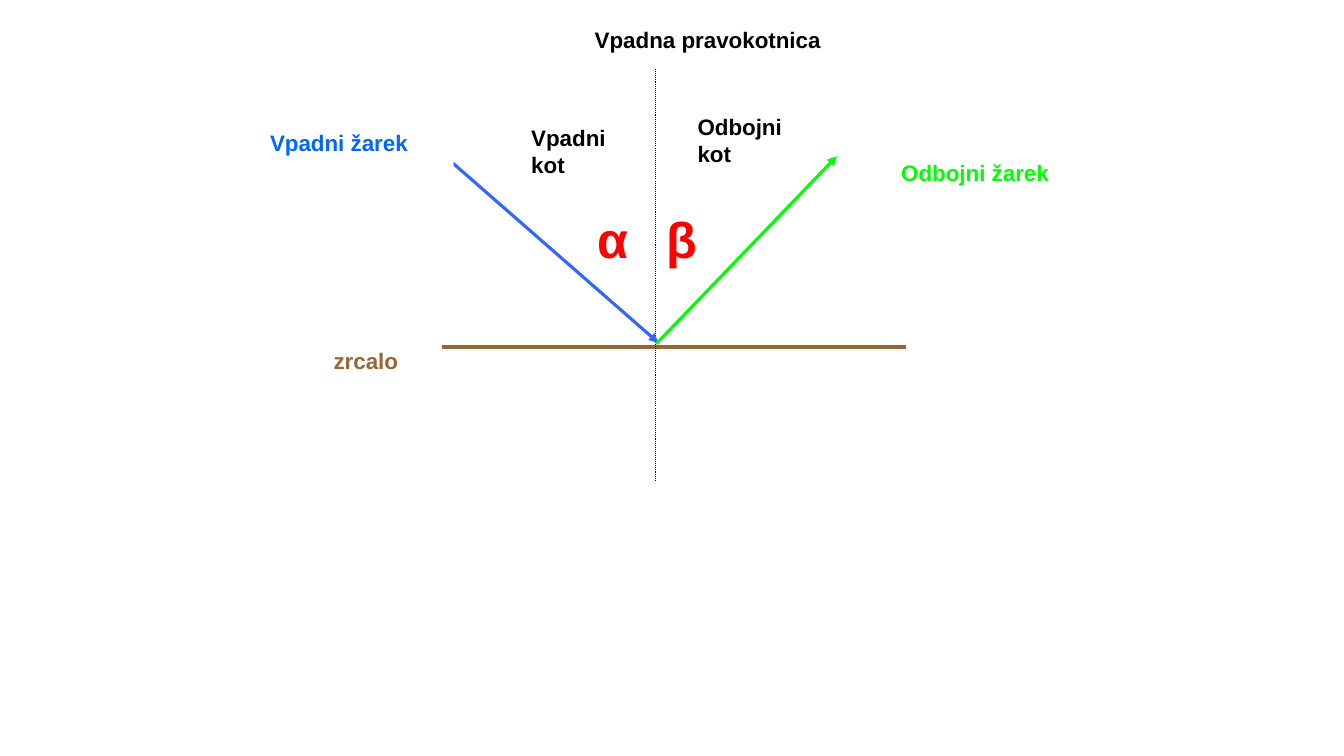
from lxml.etree import SubElement
from pptx import Presentation
from pptx.dml.color import RGBColor
from pptx.enum.dml import MSO_LINE
from pptx.enum.shapes import MSO_CONNECTOR, MSO_SHAPE
from pptx.enum.text import MSO_ANCHOR, PP_ALIGN
from pptx.oxml.ns import qn
from pptx.util import Inches, Pt

BLACK = RGBColor(0x00, 0x00, 0x00)
WHITE = RGBColor(0xFF, 0xFF, 0xFF)
RED = RGBColor(0xFF, 0x00, 0x00)
BROWN = RGBColor(0x99, 0x66, 0x33)
RAY_BLUE = RGBColor(0x33, 0x66, 0xFF)
LABEL_BLUE = RGBColor(0x00, 0x66, 0xFF)
GREEN = RGBColor(0x00, 0xFF, 0x00)


class ReflectionDiagram:
    """Draws the diagram on a grid of tenth-inch columns and rows."""

    cell = Inches(0.1)
    label_font = {"name": "Arial", "size": Pt(16), "bold": True}
    angle_font = {**label_font, "size": Pt(36)}

    def __init__(self, presentation):
        self.slide = presentation.slides.add_slide(presentation.slide_layouts[6])

    def grid(self, *cells):
        """Turns grid cells into lengths."""
        return [round(count * self.cell) for count in cells]

    def line(self, start, end, color, width, arrow=False, dash=None):
        """Adds a straight line, with an arrowhead at its end if wanted."""
        connector = self.slide.shapes.add_connector(
            MSO_CONNECTOR.STRAIGHT, *self.grid(*start, *end))
        connector.line.color.rgb = color
        connector.line.width = Pt(width)
        if dash:
            connector.line.dash_style = dash
        properties = connector.element.spPr
        if arrow:
            SubElement(properties.find(qn("a:ln")), qn("a:tailEnd"), type="triangle")
        SubElement(properties, qn("a:effectLst"))

    def set_text(self, shape, text, color, font, align=PP_ALIGN.LEFT):
        """Puts one formatted paragraph into a shape."""
        frame = shape.text_frame
        frame.word_wrap = True
        frame.vertical_anchor = MSO_ANCHOR.TOP
        paragraph = frame.paragraphs[0]
        paragraph.text = text
        paragraph.alignment = align
        for name, value in font.items():
            setattr(paragraph.font, name, value)
        paragraph.font.color.rgb = color

    def label(self, text, left, top, width, color=BLACK, height=4.7):
        """Adds a white box with a label."""
        shape = self.slide.shapes.add_shape(
            MSO_SHAPE.RECTANGLE, *self.grid(left, top, width, height))
        shape.shadow.inherit = False
        shape.fill.solid()
        shape.fill.fore_color.rgb = WHITE
        shape.line.fill.background()
        self.set_text(shape, text, color, self.label_font)

    def angle(self, text, left, width, align):
        """Adds the Greek letter of an angle."""
        shape = self.slide.shapes.add_textbox(*self.grid(left, 20.2, width, 7.1))
        self.set_text(shape, text, RED, self.angle_font, align)


def main():
    presentation = Presentation()
    presentation.slide_width = Inches(13.33)
    presentation.slide_height = Inches(7.5)
    diagram = ReflectionDiagram(presentation)

    diagram.line((43.8, 34.4), (89.9, 34.4), BROWN, 3)
    diagram.label("zrcalo", 32.1, 33.9, 9, BROWN)
    diagram.line((65, 4.4), (65, 47.7), BLACK, 0.75, dash=MSO_LINE.ROUND_DOT)
    diagram.label("Vpadna pravokotnica", 58, 2.1, 26.9)
    diagram.line((42.3, 13.9), (65.3, 34), RAY_BLUE, 2.25, arrow=True)
    diagram.line((65.1, 34.1), (83, 15.5), GREEN, 2.25, arrow=True)
    diagram.label("Vpadni žarek", 25.8, 12.3, 19.2, LABEL_BLUE)
    diagram.label("Odbojni žarek", 88.4, 15.3, 19.2, GREEN)
    diagram.label("Vpadni kot", 51.7, 11.8, 10.2, height=7.8)
    diagram.label("Odbojni kot", 68.2, 10.7, 11.5, height=7.8)
    diagram.angle("β", 65.1, 6.3, PP_ALIGN.LEFT)
    diagram.angle("α", 57.2, 7.1, PP_ALIGN.CENTER)

    presentation.save("out.pptx")


if __name__ == "__main__":
    main()
